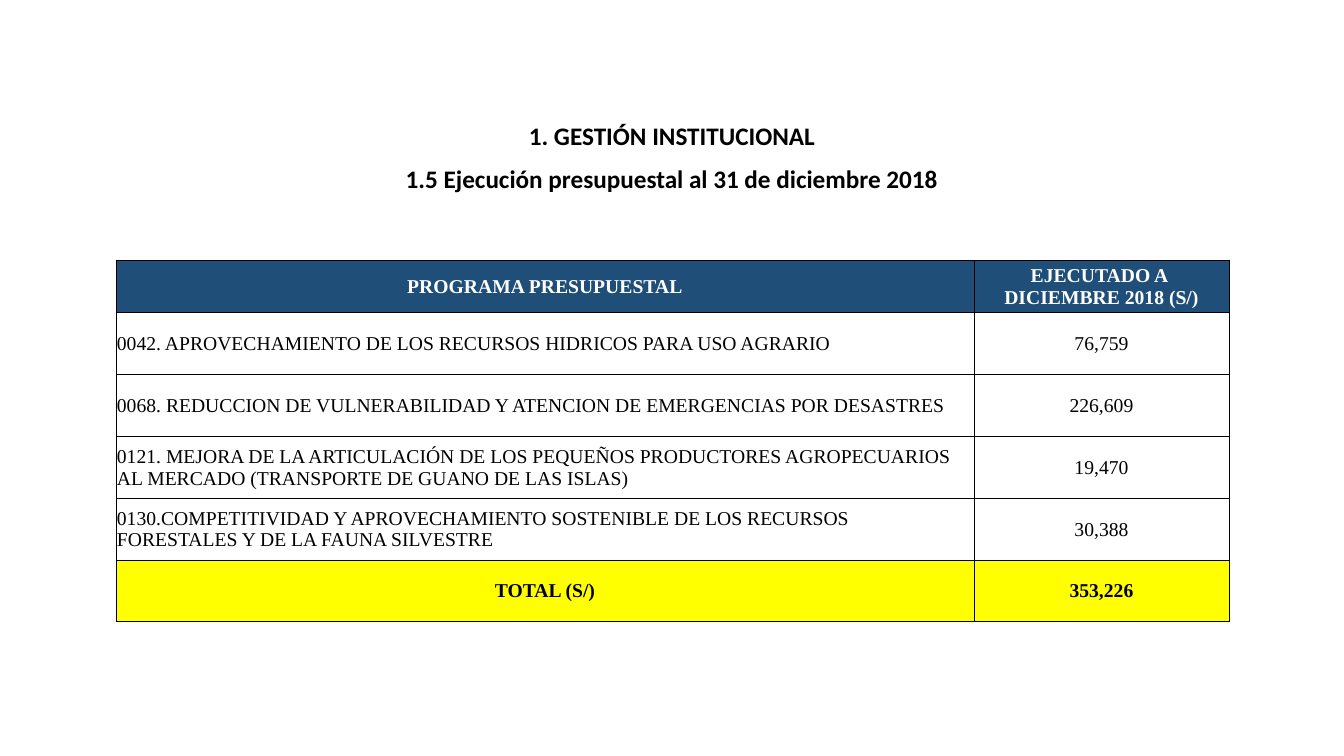
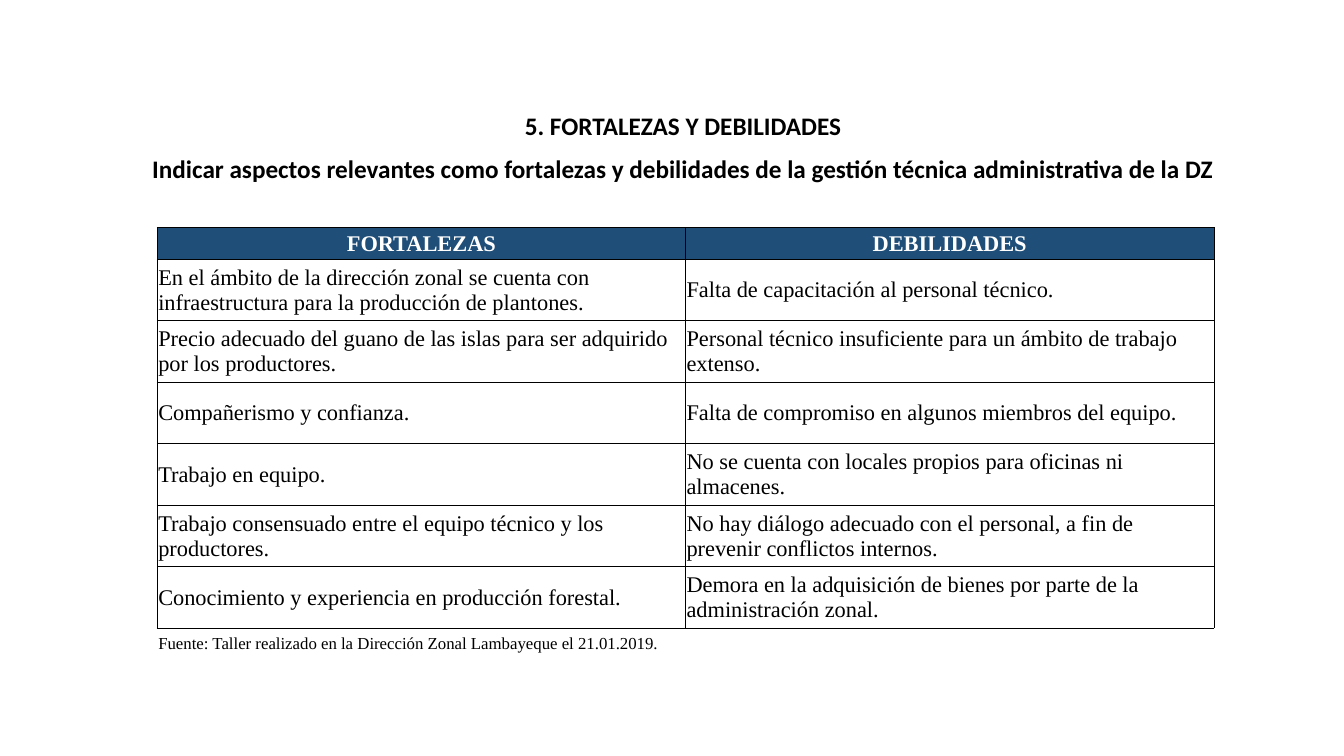
from dataclasses import dataclass
from typing import Optional

from lxml import etree
from pptx import Presentation
from pptx.dml.color import RGBColor
from pptx.enum import text as t
from pptx.oxml import ns
from pptx.util import Inches, Pt

BLACK = RGBColor(0x00, 0x00, 0x00)
WHITE = RGBColor(0xFF, 0xFF, 0xFF)
NAVY = RGBColor(0x1F, 0x4E, 0x78)
YELLOW = RGBColor(0xFF, 0xFF, 0x00)
TITLE_FONT, TABLE_FONT = "Calibri", "Times New Roman"
TITLE_ONLY = 5
LEFT, CENTER = t.PP_ALIGN.LEFT, t.PP_ALIGN.CENTER
ALL_SIDES = ("L", "R", "T", "B")


@dataclass(frozen=True)
class Heading:
    lines: tuple[str, str]
    left: float
    top: float
    width: float
    height: float
    indent: float = 0


@dataclass(frozen=True)
class RowStyle:
    height: float
    size: int
    aligns: tuple = (LEFT, LEFT)
    color: RGBColor = BLACK
    bold: bool = False
    fill: Optional[RGBColor] = None
    sides: tuple[str, ...] = ALL_SIDES


@dataclass(frozen=True)
class Row:
    """One table row; a single text spans every column."""
    texts: tuple[str, ...]
    style: RowStyle


@dataclass(frozen=True)
class Grid:
    left: float
    top: float
    columns: tuple[float, float]
    rows: list[Row]


def header_style(height: float, size: int) -> RowStyle:
    return RowStyle(height, size, (CENTER, CENTER), WHITE, True, NAVY)


def add_text(para, text: str, font_name: str, size: int, color: RGBColor, bold: bool) -> None:
    """Add one run for each line of the text."""
    for index, line in enumerate(text.split("\n")):
        if index:
            para.add_line_break()
        span = para.add_run()
        span.text = line
        span.font.name = font_name
        span.font.size = Pt(size)
        span.font.bold = bold
        span.font.color.rgb = color


def add_heading(page, heading: Heading) -> None:
    box = page.shapes.title
    box.left, box.top = Inches(heading.left), Inches(heading.top)
    box.width, box.height = Inches(heading.width), Inches(heading.height)
    frame = box.text_frame
    frame.word_wrap = True
    frame.auto_size = t.MSO_AUTO_SIZE.NONE
    frame.vertical_anchor = t.MSO_ANCHOR.TOP
    frame.margin_left = Inches(0.1 + heading.indent)
    for index, line in enumerate(heading.lines):
        para = frame.add_paragraph() if index else frame.paragraphs[0]
        para.alignment = CENTER
        para.line_spacing = 1.07
        para.space_after = Pt(8)
        add_text(para, line, TITLE_FONT, 18, BLACK, True)


def set_borders(cell, sides: tuple[str, ...]) -> None:
    """Draw thin black borders on the given sides and clear the others."""
    properties = cell._tc.get_or_add_tcPr()
    for index, side in enumerate(ALL_SIDES):
        line = etree.Element(ns.qn(f"a:ln{side}"), w=str(Pt(0.5)))
        if side in sides:
            fill = etree.SubElement(line, ns.qn("a:solidFill"))
            etree.SubElement(fill, ns.qn("a:srgbClr"), val=str(BLACK))
        else:
            etree.SubElement(line, ns.qn("a:noFill"))
        properties.insert(index, line)


def format_cell(cell, style: RowStyle) -> None:
    cell.vertical_anchor = t.MSO_ANCHOR.MIDDLE
    cell.margin_left = cell.margin_right = cell.margin_top = Inches(0.01)
    cell.margin_bottom = 0
    if style.fill is None:
        cell.fill.background()
    else:
        cell.fill.solid()
        cell.fill.fore_color.rgb = style.fill
    set_borders(cell, style.sides)


def add_grid(page, grid: Grid) -> None:
    width = sum(grid.columns)
    height = sum(row.style.height for row in grid.rows)
    table = page.shapes.add_table(
        len(grid.rows), len(grid.columns), Inches(grid.left), Inches(grid.top),
        Inches(width), Inches(height)).table
    table.first_row = table.horz_banding = False
    for column, column_width in zip(table.columns, grid.columns):
        column.width = Inches(column_width)
    for index, row in enumerate(grid.rows):
        style = row.style
        table.rows[index].height = Inches(style.height)
        cells = list(table.rows[index].cells)
        if len(row.texts) == 1:
            cells[0].merge(cells[-1])
        for cell in cells:
            format_cell(cell, style)
        for cell, text, align in zip(cells, row.texts, style.aligns):
            para = cell.text_frame.paragraphs[0]
            para.alignment = align
            add_text(para, text, TABLE_FONT, style.size, style.color, style.bold)


def budget_grid() -> Grid:
    header_height, table_height = 0.52, 3.59
    programs = [
        ("0042. APROVECHAMIENTO DE LOS RECURSOS HIDRICOS PARA USO AGRARIO", "76,759"),
        ("0068. REDUCCION DE VULNERABILIDAD Y ATENCION DE EMERGENCIAS POR DESASTRES",
         "226,609"),
        ("0121. MEJORA DE LA ARTICULACIÓN DE LOS PEQUEÑOS PRODUCTORES AGROPECUARIOS "
         "AL MERCADO (TRANSPORTE DE GUANO DE LAS ISLAS)", "19,470"),
        ("0130.COMPETITIVIDAD Y APROVECHAMIENTO SOSTENIBLE DE LOS RECURSOS "
         "FORESTALES Y DE LA FAUNA SILVESTRE", "30,388"),
    ]
    row_height = (table_height - header_height) / (len(programs) + 1)
    body = RowStyle(row_height, 14, (LEFT, CENTER))
    total = RowStyle(row_height, 14, (CENTER, CENTER), bold=True, fill=YELLOW)
    return Grid(1.15, 2.58, (8.51, 2.53), [
        Row(("PROGRAMA PRESUPUESTAL", "EJECUTADO A \nDICIEMBRE 2018 (S/)"),
            header_style(header_height, 14)),
        *(Row(program, body) for program in programs),
        Row(("TOTAL (S/)", "353,226"), total),
    ])


def strengths_grid() -> Grid:
    pairs = [
        ("En el ámbito de la dirección zonal se cuenta con infraestructura para la "
         "producción de plantones.", "Falta de capacitación al personal técnico."),
        ("Precio adecuado del guano de las islas para ser adquirido por los productores.",
         "Personal técnico insuficiente para un ámbito de trabajo extenso."),
        ("Compañerismo y confianza.",
         "Falta de compromiso en algunos miembros del equipo."),
        ("Trabajo en equipo.",
         "No se cuenta con locales propios para oficinas ni almacenes."),
        ("Trabajo consensuado entre el equipo técnico y los productores.",
         "No hay diálogo adecuado con el personal, a fin de prevenir conflictos internos."),
        ("Conocimiento y experiencia en producción forestal.",
         "Demora en la adquisición de bienes por parte de la administración zonal."),
    ]
    body = RowStyle(0.61, 16)
    source = RowStyle(0.31, 12, sides=("T",))
    return Grid(1.56, 2.26, (5.24, 5.24), [
        Row(("FORTALEZAS", "DEBILIDADES"), header_style(0.31, 16)),
        *(Row(pair, body) for pair in pairs),
        Row(("Fuente: Taller realizado en la Dirección Zonal Lambayeque el 21.01.2019.",),
            source),
    ])


def main() -> None:
    deck = Presentation()
    deck.slide_width, deck.slide_height = Inches(13.33), Inches(7.5)
    contents = [
        (Heading(("1. GESTIÓN INSTITUCIONAL",
                  "1.5 Ejecución presupuestal al 31 de diciembre 2018"),
                 0.65, 1.12, 12.03, 0.86), budget_grid()),
        (Heading(("5. FORTALEZAS Y DEBILIDADES",
                  "Indicar aspectos relevantes como fortalezas y debilidades de la "
                  "gestión técnica administrativa de la DZ"),
                 0.76, 1.02, 11.82, 0.85, indent=0.21), strengths_grid()),
    ]
    for heading, grid in contents:
        page = deck.slides.add_slide(deck.slide_layouts[TITLE_ONLY])
        add_heading(page, heading)
        add_grid(page, grid)
    deck.save("out.pptx")


if __name__ == "__main__":
    main()
